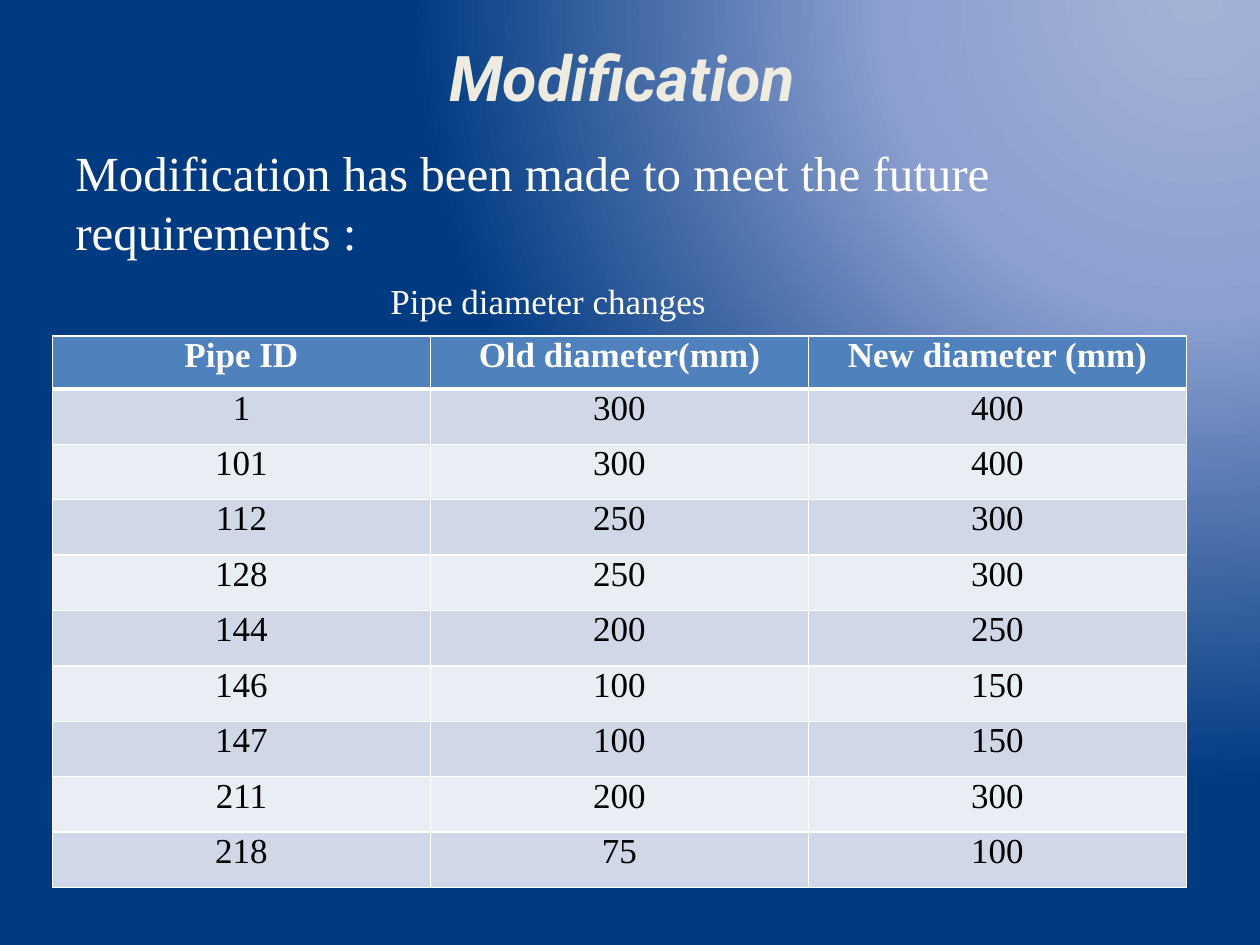
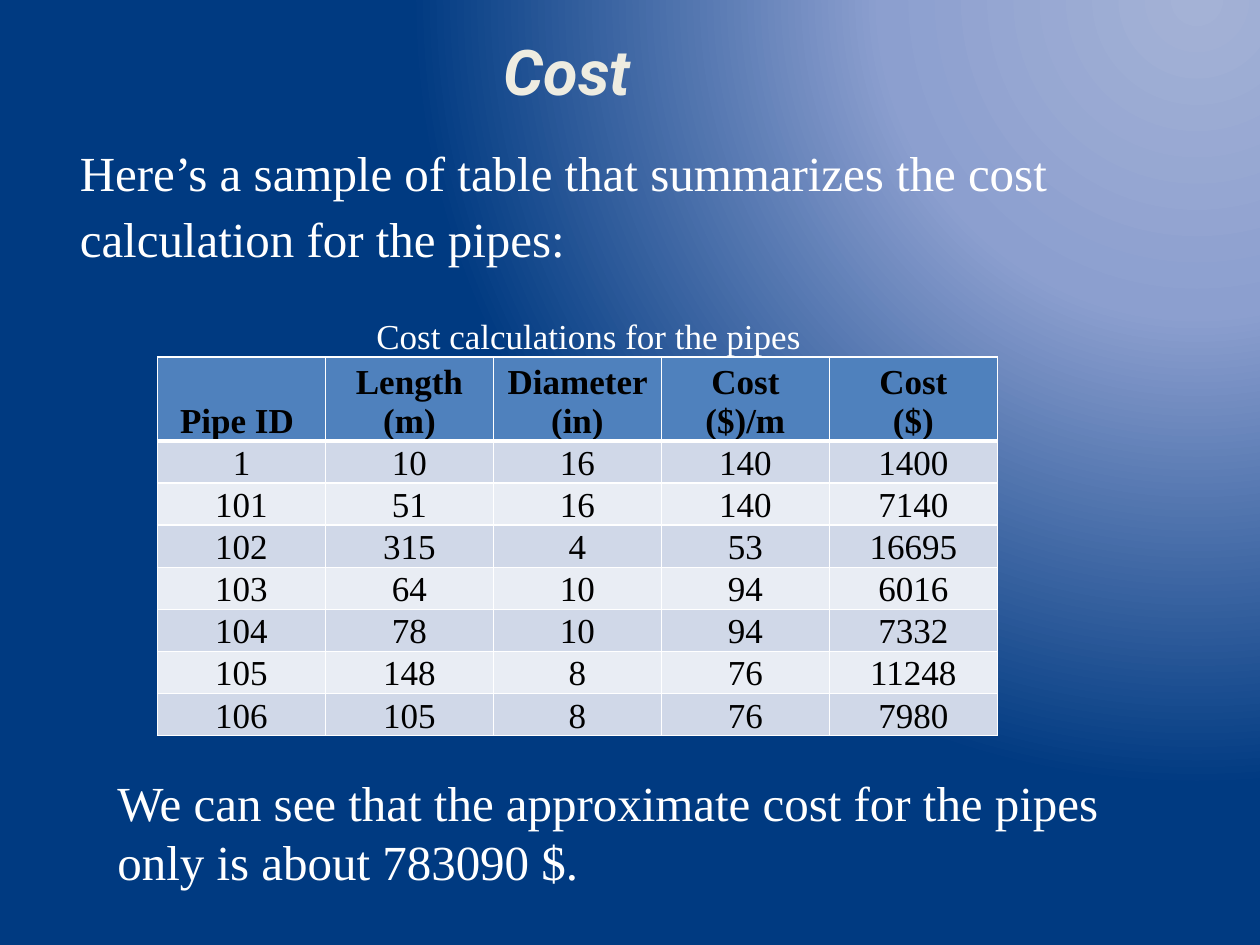
from lxml.etree import SubElement
from pptx import Presentation
from pptx.dml.color import RGBColor
from pptx.enum.text import MSO_ANCHOR, PP_ALIGN
from pptx.oxml import parse_xml
from pptx.oxml.ns import nsdecls, qn
from pptx.util import Pt

WHITE, BLACK, CREAM = "FFFFFF", "000000", "EEECE1"
HEADER_FILL, BAND_FILLS = "4F81BD", ("D0D8E8", "E9EDF4")
BODY_FONT, TITLE_FONT = "Times New Roman", "Roboto"
GRADIENT = ((0, "A4B2D6"), (40, "8C9FCF"), (100, "003A81"))


def color(hex_string):
    return RGBColor.from_string(hex_string)


def write(frame, text, size=28, font=BODY_FONT, fill=WHITE, bold=False, italic=False,
          align=PP_ALIGN.LEFT, indent=0, before=0, more=False):
    """Write one paragraph per line of text; more=True continues a filled frame."""
    frame.word_wrap = True
    for number, line in enumerate(text.split("\n")):
        first = number == 0 and not more
        para = frame.paragraphs[0] if first else frame.add_paragraph()
        para.alignment = align
        para.space_before = Pt(0 if first else before)
        if indent:
            para._p.get_or_add_pPr().set("marL", str(Pt(indent)))
        span = para.add_run()
        span.text = line
        span.font.name, span.font.size = font, Pt(size)
        span.font.bold, span.font.italic = bold, italic
        span.font.color.rgb = color(fill)


deck = Presentation()
deck.slide_width, deck.slide_height = Pt(720), Pt(540)

# Shared background: a glow in the upper right corner
master = deck.slide_master
master.background.fill.solid()
background = master.element.xpath("//p:bgPr")[0]
stops = "".join(f'<a:gs pos="{place * 1000}"><a:srgbClr val="{tone}"/></a:gs>'
                for place, tone in GRADIENT)
background.replace(background.find(qn("a:solidFill")), parse_xml(
    f'<a:gradFill {nsdecls("a")} rotWithShape="1"><a:gsLst>{stops}</a:gsLst>'
    '<a:path path="circle"><a:fillToRect l="95000" t="-106000" r="5000" b="206000"/>'
    '</a:path></a:gradFill>'))

pages = [
    {
        "title": ("Modification ", (36, 12, 648, 63)),
        "boxes": [
            ((36, 78, 549, 97),
             [("Modification has been made to meet the future requirements :", {})]),
            ((216, 156, 200, 32), [("Pipe diameter changes", {"size": 20})]),
        ],
        "table": {
            "at": (30, 192), "column": 216, "heights": (30.24, 31.68),
            "header_color": WHITE, "anchor": MSO_ANCHOR.TOP,
            "rows": [
                ("Pipe ID", "Old diameter(mm)", "New diameter (mm)"),
                (1, 300, 400), (101, 300, 400), (112, 250, 300),
                (128, 250, 300), (144, 200, 250), (146, 100, 150),
                (147, 100, 150), (211, 200, 300), (218, 75, 100),
            ],
        },
    },
    {
        "title": ("Cost", (0, 12, 648, 56)),
        "boxes": [
            ((30, 78, 648, 264),
             [("Here’s a sample of table that summarizes the cost\n"
               "calculation for the pipes:", {"indent": 8.6, "before": 4}),
              ("Cost calculations for the pipes",
               {"size": 20, "indent": 178, "before": 27, "more": True})]),
            ((60, 438, 594, 75),
             [("We can see that the approximate cost for the pipes "
               "only is about 783090 $.", {})]),
        ],
        "table": {
            "at": (90, 204), "column": 96, "heights": (21, 21),
            "header_color": BLACK, "anchor": MSO_ANCHOR.BOTTOM,
            "rows": [
                ("Pipe ID ", "Length\n(m)", "Diameter (in)", "Cost\n($)/m", "Cost\n($)"),
                (1, 10, 16, 140, 1400), (101, 51, 16, 140, 7140),
                (102, 315, 4, 53, 16695), (103, 64, 10, 94, 6016),
                (104, 78, 10, 94, 7332), (105, 148, 8, 76, 11248),
                (106, 105, 8, 76, 7980),
            ],
        },
    },
]

for content in pages:
    page = deck.slides.add_slide(deck.slide_layouts[6])

    title, place = content["title"]
    box = page.shapes.add_textbox(*map(Pt, place))
    box.text_frame.vertical_anchor = MSO_ANCHOR.MIDDLE
    write(box.text_frame, title, size=36, font=TITLE_FONT, fill=CREAM,
          bold=True, italic=True, align=PP_ALIGN.CENTER)

    for place, texts in content["boxes"]:
        box = page.shapes.add_textbox(*map(Pt, place))
        for text, style in texts:
            write(box.text_frame, text, **style)

    layout = content["table"]
    rows = layout["rows"]
    header_height, row_height = layout["heights"]
    columns = len(rows[0])
    table = page.shapes.add_table(
        len(rows), columns, *map(Pt, layout["at"]), Pt(columns * layout["column"]),
        Pt(header_height + (len(rows) - 1) * row_height)).table
    for column in table.columns:
        column.width = Pt(layout["column"])
    for row_number, values in enumerate(rows):
        header = row_number == 0
        table.rows[row_number].height = Pt(header_height if header else row_height)
        for column_number, value in enumerate(values):
            cell = table.cell(row_number, column_number)
            cell.margin_left = cell.margin_right = Pt(5)
            cell.margin_top = cell.margin_bottom = 0
            cell.vertical_anchor = layout["anchor"]
            write(cell.text_frame, str(value), size=20, bold=header, align=PP_ALIGN.CENTER,
                  fill=layout["header_color"] if header else BLACK)
            for side in ("L", "R", "T", "B"):
                thick = (row_number, side) in ((0, "B"), (1, "T"))
                border = SubElement(cell._tc.get_or_add_tcPr(), qn(f"a:ln{side}"),
                                    w=str(Pt(3 if thick else 1)))
                SubElement(SubElement(border, qn("a:solidFill")), qn("a:srgbClr"), val=WHITE)
            cell.fill.solid()
            cell.fill.fore_color.rgb = color(
                HEADER_FILL if header else BAND_FILLS[(row_number - 1) % 2])

deck.save("out.pptx")
